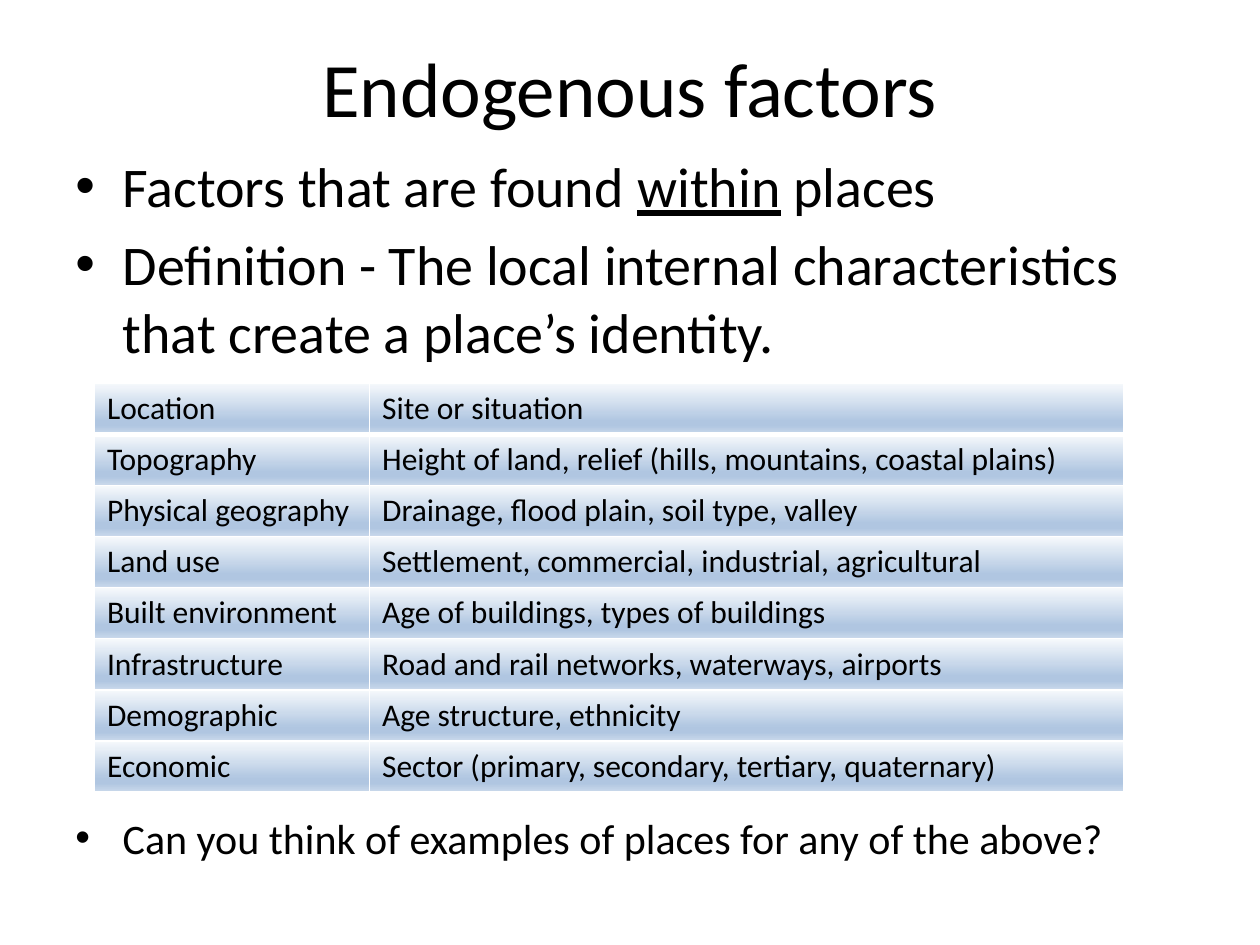
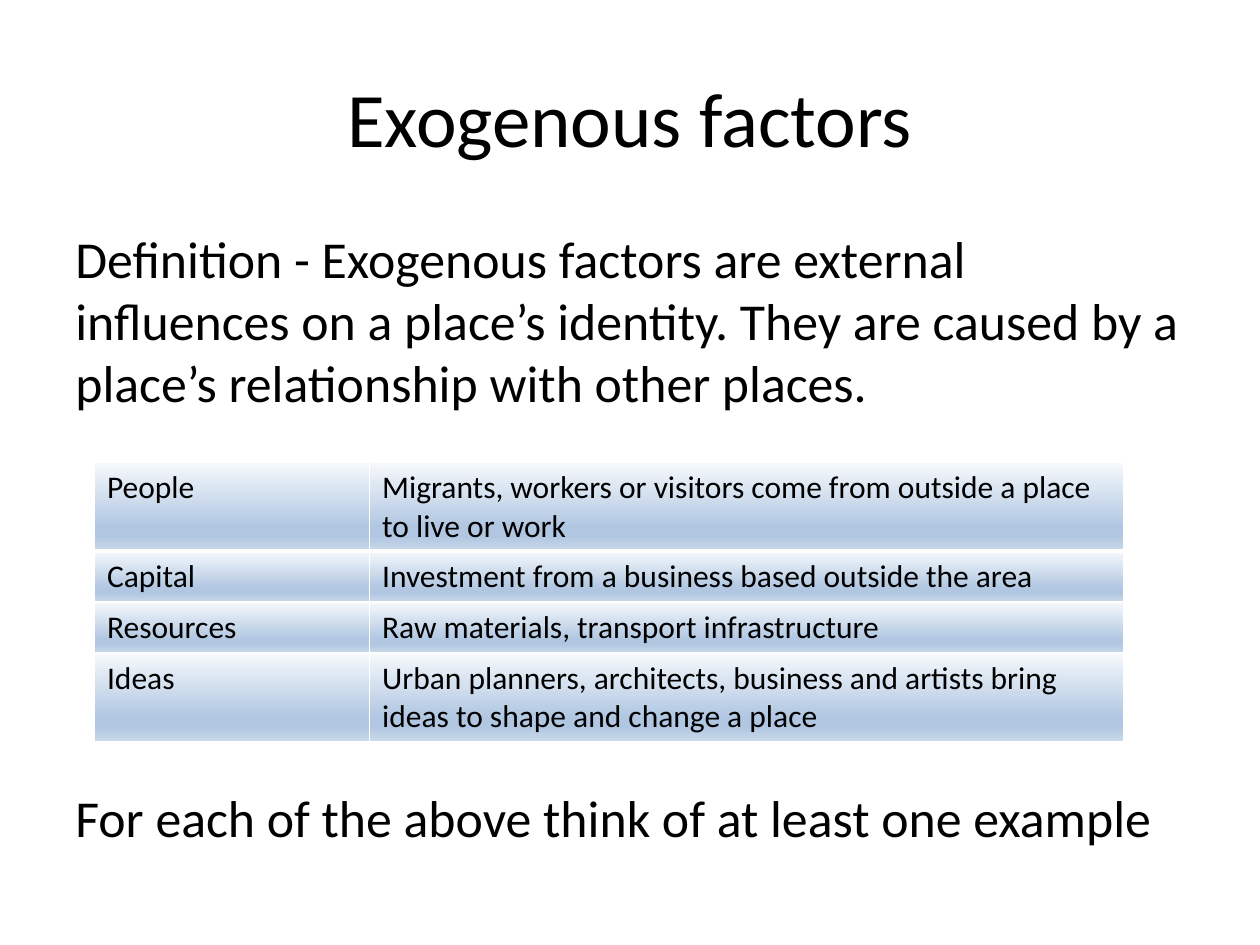
import dataclasses

import lxml.etree
import pptx
import pptx.dml.color
import pptx.enum.text
import pptx.oxml.ns
import pptx.util

Pt = pptx.util.Pt
qn = pptx.oxml.ns.qn


@dataclasses.dataclass(frozen=True)
class Theme:
    font: str = "Calibri"
    ink: str = "000000"
    rule: str = "FFFFFF"
    shading: tuple = ((0, "F6F9FC"), (74, "B0C6E1"), (83, "B0C6E1"), (100, "CAD9EB"))
    title_size: float = 44
    bullet_size: float = 32
    definition_size: float = 29.6
    question_size: float = 24
    table_size: float = 18
    thin_rule: float = 1
    thick_rule: float = 3


@dataclasses.dataclass
class Statement:
    """A paragraph of body text; pieces between underscores are underlined."""
    text: str
    size: float
    before: float = 0
    bullet: bool = False


class FactorDeck:
    LEFT, WIDTH = 36, 648
    TITLE_HEIGHT = 90
    TABLE_LEFT = 54
    COLUMNS = (157.2, 430.8)
    ROW_HEIGHT = 29.2
    HANGING = 27

    def __init__(self, theme):
        self.theme = theme
        self.slide = None
        self.presentation = pptx.Presentation()
        self.presentation.slide_width = Pt(720)
        self.presentation.slide_height = Pt(540)

    def style(self, paragraph, size):
        paragraph.font.name = self.theme.font
        paragraph.font.size = Pt(size)
        paragraph.font.color.rgb = pptx.dml.color.RGBColor.from_string(self.theme.ink)

    def add_slide(self, heading, top):
        self.slide = self.presentation.slides.add_slide(self.presentation.slide_layouts[5])
        title = self.slide.shapes.title
        title.left, title.top = Pt(self.LEFT), Pt(top)
        title.width, title.height = Pt(self.WIDTH), Pt(self.TITLE_HEIGHT)
        title.text_frame.text = heading
        title.text_frame.vertical_anchor = pptx.enum.text.MSO_ANCHOR.MIDDLE
        paragraph = title.text_frame.paragraphs[0]
        paragraph.alignment = pptx.enum.text.PP_ALIGN.CENTER
        self.style(paragraph, self.theme.title_size)

    def add_body(self, top, height, statements):
        body = self.slide.shapes.add_textbox(
            Pt(self.LEFT), Pt(top), Pt(self.WIDTH), Pt(height))
        frame = body.text_frame
        frame.word_wrap = True
        for index, statement in enumerate(statements):
            paragraph = frame.add_paragraph() if index else frame.paragraphs[0]
            paragraph.space_before = Pt(statement.before)
            if statement.bullet:
                self.add_bullet(paragraph)
            self.style(paragraph, statement.size)
            for part, words in enumerate(statement.text.split("_")):
                run = paragraph.add_run()
                run.text = words
                if part % 2:
                    run.font.underline = True

    def add_bullet(self, paragraph):
        properties = paragraph._p.get_or_add_pPr()
        properties.set("marL", str(Pt(self.HANGING)))
        properties.set("indent", str(-Pt(self.HANGING)))
        lxml.etree.SubElement(properties, qn("a:buFont"), typeface="Arial")
        lxml.etree.SubElement(properties, qn("a:buChar"), char="•")

    def add_factors(self, top, factors):
        table = self.slide.shapes.add_table(
            len(factors), len(self.COLUMNS), Pt(self.TABLE_LEFT), Pt(top),
            Pt(sum(self.COLUMNS)), Pt(self.ROW_HEIGHT * len(factors))).table
        table.first_row = table.horz_banding = False
        for column, width in zip(table.columns, self.COLUMNS):
            column.width = Pt(width)
        for row, texts in enumerate(factors):
            table.rows[row].height = Pt(self.ROW_HEIGHT)
            for column, text in enumerate(texts):
                cell = table.cell(row, column)
                cell.text = text
                self.style(cell.text_frame.paragraphs[0], self.theme.table_size)
                self.dress_cell(cell, row)

    def dress_cell(self, cell, row):
        """Draw the rules, thick below the first row, and the gradient."""
        thin, thick = self.theme.thin_rule, self.theme.thick_rule
        widths = {"lnL": thin, "lnR": thin,
                  "lnT": thick if row == 1 else thin,
                  "lnB": thick if row == 0 else thin}
        properties = cell._tc.get_or_add_tcPr()
        for side, width in widths.items():
            line = lxml.etree.SubElement(properties, qn("a:" + side), w=str(Pt(width)))
            fill = lxml.etree.SubElement(line, qn("a:solidFill"))
            lxml.etree.SubElement(fill, qn("a:srgbClr"), val=self.theme.rule)
        gradient = lxml.etree.SubElement(properties, qn("a:gradFill"), rotWithShape="1")
        stops = lxml.etree.SubElement(gradient, qn("a:gsLst"))
        for percent, color in self.theme.shading:
            stop = lxml.etree.SubElement(stops, qn("a:gs"), pos=str(percent * 1000))
            lxml.etree.SubElement(stop, qn("a:srgbClr"), val=color)
        lxml.etree.SubElement(gradient, qn("a:lin"), ang=str(90 * 60000), scaled="0")


def main():
    theme = Theme()
    deck = FactorDeck(theme)

    deck.add_slide("Endogenous factors", 4.5)
    deck.add_body(83, 430, [
        Statement("Factors that are found _within_ places", theme.bullet_size, bullet=True),
        Statement("Definition - The local internal characteristics that create "
                  "a place’s identity.", theme.bullet_size, 6.4, True),
        Statement("Can you think of examples of places for any of the above?",
                  theme.question_size, 256, True),
    ])
    deck.add_factors(219, [
        ("Location", "Site or situation"),
        ("Topography", "Height of land, relief (hills, mountains, coastal plains)"),
        ("Physical geography", "Drainage, flood plain, soil type, valley"),
        ("Land use", "Settlement, commercial, industrial, agricultural"),
        ("Built environment", "Age of buildings, types of buildings"),
        ("Infrastructure", "Road and rail networks, waterways, airports"),
        ("Demographic", "Age structure, ethnicity"),
        ("Economic", "Sector (primary, secondary, tertiary, quaternary)"),
    ])

    deck.add_slide("Exogenous factors", 21.6)
    deck.add_body(126, 356.4, [
        Statement("Definition - Exogenous factors are external influences on a place’s "
                  "identity. They are caused by a place’s relationship with other places.",
                  theme.definition_size),
        Statement("For each of the above think of at least one example",
                  theme.definition_size, 213),
    ])
    deck.add_factors(264.4, [
        ("People", "Migrants, workers or visitors come from outside a place to live or work"),
        ("Capital", "Investment from a business based outside the area"),
        ("Resources", "Raw materials, transport infrastructure"),
        ("Ideas", "Urban planners, architects, business and artists bring ideas "
                  "to shape and change a place"),
    ])

    deck.presentation.save("out.pptx")


if __name__ == "__main__":
    main()
